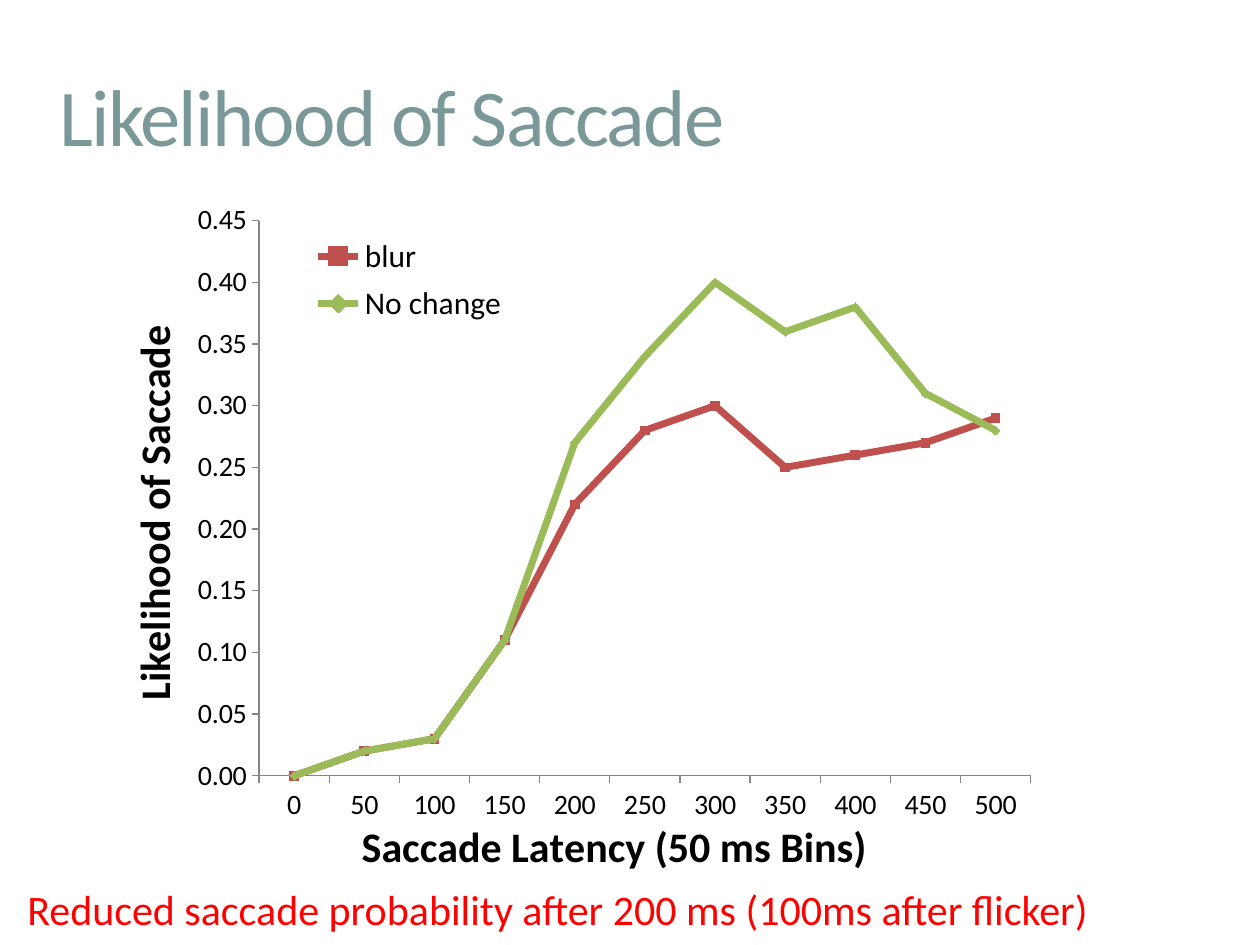
import lxml.etree
import pptx
import pptx.chart.data
import pptx.dml.color
import pptx.enum.chart
import pptx.enum.text
import pptx.oxml.ns
import pptx.util

SCALE = 914400 / 126
FONT = "Calibri"
TEAL = pptx.dml.color.RGBColor(0x7B, 0x98, 0x99)
RED = pptx.dml.color.RGBColor(0xFF, 0x00, 0x00)
BLACK = pptx.dml.color.RGBColor(0x00, 0x00, 0x00)
GRAY = pptx.dml.color.RGBColor(0x86, 0x86, 0x86)
BRICK = pptx.dml.color.RGBColor(0xC0, 0x50, 0x4D)
GREEN = pptx.dml.color.RGBColor(0x9B, 0xBB, 0x59)
MARKER = pptx.enum.chart.XL_MARKER_STYLE
ANCHOR = pptx.enum.text.MSO_ANCHOR

BINS = [str(ms) for ms in range(0, 501, 50)]
SERIES = [
    ("blur", BRICK, MARKER.SQUARE,
     [0, 0.02, 0.03, 0.11, 0.22, 0.28, 0.3, 0.25, 0.26, 0.27, 0.29]),
    ("No change", GREEN, MARKER.DIAMOND,
     [0, 0.02, 0.03, 0.11, 0.27, 0.34, 0.4, 0.36, 0.38, 0.31, 0.28]),
]


def emu(*lengths):
    return [pptx.util.Emu(round(n * SCALE)) for n in lengths]


def apply(target, values):
    for name, value in values.items():
        setattr(target, name, value)


class SlideBuilder:
    def __init__(self, prs):
        self.slide = prs.slides.add_slide(prs.slide_layouts[6])

    def style(self, font, size, color=BLACK, bold=False):
        apply(font, {"name": FONT, "size": pptx.util.Pt(size), "bold": bold})
        font.color.rgb = color

    def text(self, box, words, size, color, anchor=ANCHOR.TOP, spacing=0):
        tf = self.slide.shapes.add_textbox(*emu(*box)).text_frame
        apply(tf, {"word_wrap": True, "vertical_anchor": anchor})
        r = tf.paragraphs[0].add_run()
        r.text = words
        self.style(r.font, size, color)
        if spacing:
            r._r.get_or_add_rPr().set("spc", str(spacing * 100))

    def layout(self, parent, index, box, inner=False):
        qn = pptx.oxml.ns.qn
        for old in parent.findall(qn("c:layout")):
            parent.remove(old)
        layout = lxml.etree.Element(qn("c:layout"))
        manual = lxml.etree.SubElement(layout, qn("c:manualLayout"))
        values = {"layoutTarget": "inner"} if inner else {}
        values.update(xMode="edge", yMode="edge", **dict(zip("xywh", box)))
        for tag, value in values.items():
            lxml.etree.SubElement(manual, qn("c:" + tag)).set("val", str(value))
        parent.insert(index, layout)

    def axis(self, axis, title):
        apply(axis, {"has_major_gridlines": False,
                     "major_tick_mark": pptx.enum.chart.XL_TICK_MARK.OUTSIDE})
        self.style(axis.tick_labels.font, 16)
        axis.format.line.color.rgb = GRAY
        r = axis.axis_title.text_frame.paragraphs[0].add_run()
        r.text = title
        self.style(r.font, 24, bold=True)

    def line_chart(self, box, cats, series, cat_title, val_title):
        data = pptx.chart.data.CategoryChartData(number_format="0.00")
        data.categories = cats
        for name, _, _, values in series:
            data.add_series(name, values)
        kind = pptx.enum.chart.XL_CHART_TYPE.LINE_MARKERS
        chart = self.slide.shapes.add_chart(kind, *emu(*box), data).chart
        apply(chart, {"has_title": False, "has_legend": True})
        self.style(chart.font, 10)
        self.axis(chart.category_axis, cat_title)
        self.axis(chart.value_axis, val_title)
        apply(chart.value_axis, {"minimum_scale": 0, "maximum_scale": 0.45,
                                 "major_unit": 0.05})
        apply(chart.value_axis.tick_labels, {"number_format": "#,##0.00",
                                             "number_format_is_linked": False})
        plot = chart.plots[0]
        plot.vary_by_categories = False
        for line, (_, color, marker, _) in zip(plot.series, series):
            line.smooth = False
            line.format.line.width = pptx.util.Pt(4)
            line.format.line.color.rgb = color
            apply(line.marker, {"style": marker, "size": 5})
            line.marker.format.fill.solid()
            line.marker.format.fill.fore_color.rgb = color
            line.marker.format.line.color.rgb = color
        self.style(chart.legend.font, 18)
        chart.legend.include_in_layout = True
        self.layout(chart.legend._element, 1, (0.19, 0.05, 0.24, 0.15))
        self.layout(plot._element.getparent(), 0,
                    (0.15, 0.04, 0.82, 0.8), inner=True)


def main():
    prs = pptx.Presentation()
    prs.slide_width, prs.slide_height = emu(1260, 945)
    s = SlideBuilder(prs)
    s.text((47, 35, 1050, 158), "Likelihood of Saccade", 46, TEAL,
           ANCHOR.MIDDLE, spacing=-1)
    s.line_chart((118, 193, 941, 694), BINS, SERIES,
                 "Saccade Latency (50 ms Bins)", "Likelihood of Saccade")
    s.text((15, 877, 1227, 63),
           "Reduced saccade probability after 200 ms (100ms after flicker)",
           24, RED)
    prs.save("out.pptx")


if __name__ == "__main__":
    main()
